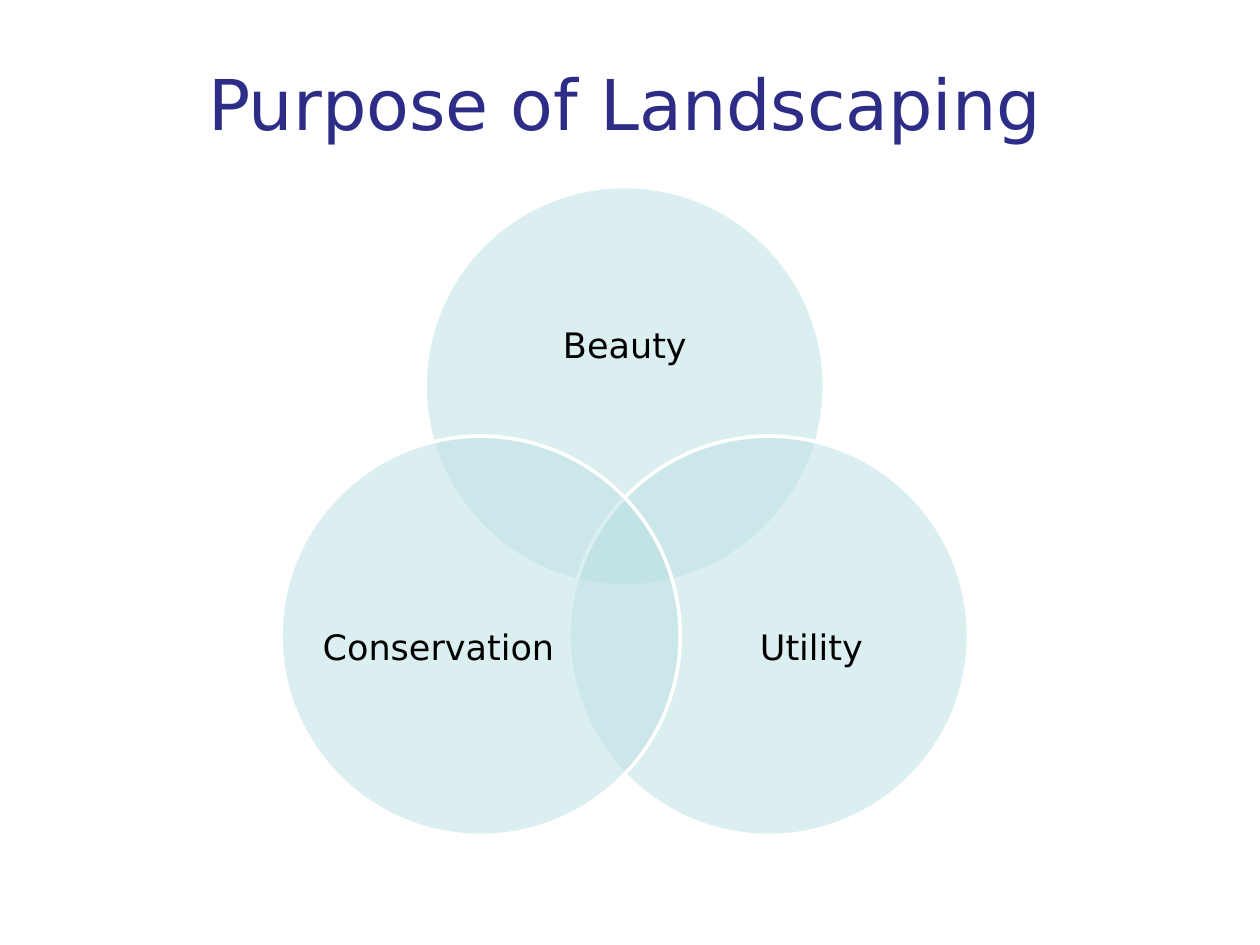
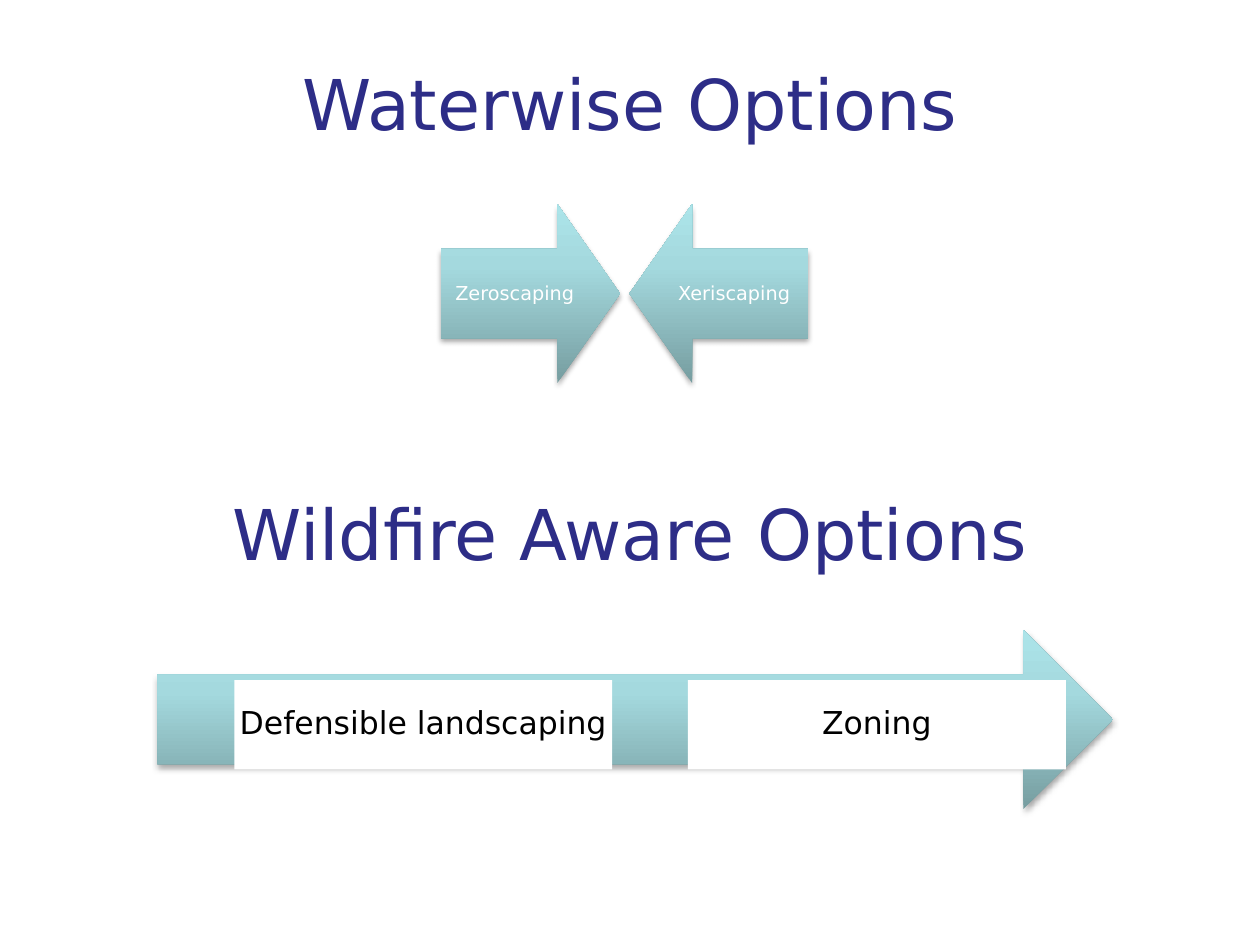
from dataclasses import dataclass
from math import cos, radians, sin

from lxml import etree
from pptx import Presentation
from pptx.dml.color import RGBColor
from pptx.enum.shapes import MSO_SHAPE
from pptx.enum.text import MSO_ANCHOR, PP_ALIGN
from pptx.oxml import parse_xml
from pptx.oxml.ns import nsdecls, qn
from pptx.shapes.autoshape import Shape
from pptx.slide import Slide
from pptx.util import Pt

OVAL, RECT = MSO_SHAPE.OVAL, MSO_SHAPE.RECTANGLE
RIGHT, LEFT = MSO_SHAPE.RIGHT_ARROW, MSO_SHAPE.LEFT_ARROW
MIDDLE, CENTER = MSO_ANCHOR.MIDDLE, PP_ALIGN.CENTER

# Shared look
NAVY = RGBColor(0x2D, 0x2D, 0x87)
BLACK = RGBColor(0, 0, 0)
WHITE = RGBColor(0xFF, 0xFF, 0xFF)
AQUA = RGBColor(0xBB, 0xE0, 0xE3)
SHADES = (
    (0, RGBColor(0x76, 0x9D, 0xA0)),
    (65, RGBColor(0xA4, 0xD9, 0xDE)),
    (100, RGBColor(0xAC, 0xE4, 0xE9)),
)
FONT = "DejaVu Sans"


@dataclass(frozen=True)
class Box:
    """A frame in points."""
    x: float
    y: float
    w: float
    h: float

    def frame(self) -> tuple:
        return Pt(self.x), Pt(self.y), Pt(self.w), Pt(self.h)


@dataclass(frozen=True)
class Style:
    size: float
    color: RGBColor
    side: float = 0
    edge: float = 0
    lead: float = 0.9


TITLE = Style(40, NAVY, 7.2, 3.6, 1.0)
CIRCLE = Style(20, BLACK)
ARROW = Style(11, WHITE, 6.5, 6.5)
PANEL = Style(18, BLACK, 0, 14.4)


@dataclass(frozen=True)
class Ring:
    text: str
    angle: float
    label: Box


@dataclass(frozen=True)
class Arrow:
    text: str
    kind: MSO_SHAPE
    x: float
    label: float


def write(shape: Shape, text: str, style: Style) -> None:
    frame = shape.text_frame
    frame.word_wrap = True
    frame.vertical_anchor = MIDDLE
    frame.margin_left = frame.margin_right = Pt(style.side)
    frame.margin_top = frame.margin_bottom = Pt(style.edge)
    para = frame.paragraphs[0]
    para.text = text
    para.alignment = CENTER
    para.line_spacing = style.lead
    para.font.name = FONT
    para.font.size = Pt(style.size)
    para.font.color.rgb = style.color


def add_text(slide: Slide, box: Box, text: str, style: Style) -> None:
    write(slide.shapes.add_textbox(*box.frame()), text, style)


def add_title(slide: Slide, text: str, x: float = 87, y: float = 18) -> None:
    add_text(slide, Box(x, y, 546, 81), text, TITLE)


def add_solid(slide: Slide, kind: MSO_SHAPE, box: Box, color: RGBColor) -> Shape:
    shape = slide.shapes.add_shape(kind, *box.frame())
    shape.shadow.inherit = False
    shape.fill.solid()
    shape.fill.fore_color.rgb = color
    shape.line.fill.background()
    return shape


def add_circle(slide: Slide, box: Box) -> None:
    shape = add_solid(slide, OVAL, box, AQUA)
    shape.line.color.rgb = WHITE
    shape.line.width = Pt(2)
    tint = shape._element.spPr.find(qn("a:solidFill"))[0]
    etree.SubElement(tint, qn("a:alpha"), val="50000")


def add_arrow(slide: Slide, kind: MSO_SHAPE, box: Box, head: float) -> None:
    """Draw an arrow, shaded from bottom to top, with a soft shadow."""
    shape = add_solid(slide, kind, box, AQUA)
    shape.adjustments[0] = 0.5
    shape.adjustments[1] = head
    props = shape._element.spPr
    stops = "".join(
        f'<a:gs pos="{pos * 1000}"><a:srgbClr val="{color}"/></a:gs>'
        for pos, color in SHADES
    )
    shade = parse_xml(
        f'<a:gradFill {nsdecls("a")} rotWithShape="0"><a:gsLst>{stops}</a:gsLst>'
        '<a:lin ang="16200000" scaled="0"/></a:gradFill>'
    )
    props.replace(props.find(qn("a:solidFill")), shade)
    glow = parse_xml(
        f'<a:outerShdw {nsdecls("a")} blurRad="{Pt(3.1)}" dist="{Pt(2)}" '
        'dir="5400000" rotWithShape="0"><a:srgbClr val="000000">'
        '<a:alpha val="35000"/></a:srgbClr></a:outerShdw>'
    )
    props.find(qn("a:effectLst")).append(glow)


def draw_purpose(slide: Slide) -> None:
    add_title(slide, "Purpose of Landscaping", x=84)
    # Three circles, centred on the corners of a triangle
    mid_x, mid_y, reach, size = 357, 315.8, 95.1, 228.2
    rings = (
        Ring("Beauty", -90, Box(273.6, 146.9, 167, 103)),
        Ring("Utility", 30, Box(395.3, 308.2, 136.8, 125.3)),
        Ring("Conservation", 150, Box(182.2, 308.2, 136.8, 125.3)),
    )
    for ring in rings:
        turn = radians(ring.angle)
        left = mid_x + reach * cos(turn) - size / 2
        top = mid_y + reach * sin(turn) - size / 2
        add_circle(slide, Box(left, top, size, size))
        add_text(slide, ring.label, ring.text, CIRCLE)


def draw_options(slide: Slide) -> None:
    add_title(slide, "Waterwise Options")
    # Two arrows that meet
    size = 102.3
    arrows = (
        Arrow("Zeroscaping", RIGHT, 252, 252),
        Arrow("Xeriscaping", LEFT, 359.7, 377.3),
    )
    for arrow in arrows:
        add_arrow(slide, arrow.kind, Box(arrow.x, 116.6, size, size), 0.35)
        label = Box(arrow.label, 142.3, 84.4, size / 2)
        add_text(slide, label, arrow.text, ARROW)

    add_title(slide, "Wildfire Aware Options", y=264)
    # Long arrow with two panels
    add_arrow(slide, RIGHT, Box(90, 360, 546, size), 0.5)
    for col, text in enumerate(("Defensible landscaping", "Zoning")):
        box = Box(133.9 + col * 259.2, 388.6, 216, size / 2)
        write(add_solid(slide, RECT, box, WHITE), text, PANEL)


def main() -> None:
    deck = Presentation()
    deck.slide_width, deck.slide_height = Pt(720), Pt(540)
    blank = deck.slide_layouts[6]
    for draw in (draw_purpose, draw_options):
        draw(deck.slides.add_slide(blank))
    deck.save("out.pptx")


if __name__ == "__main__":
    main()
